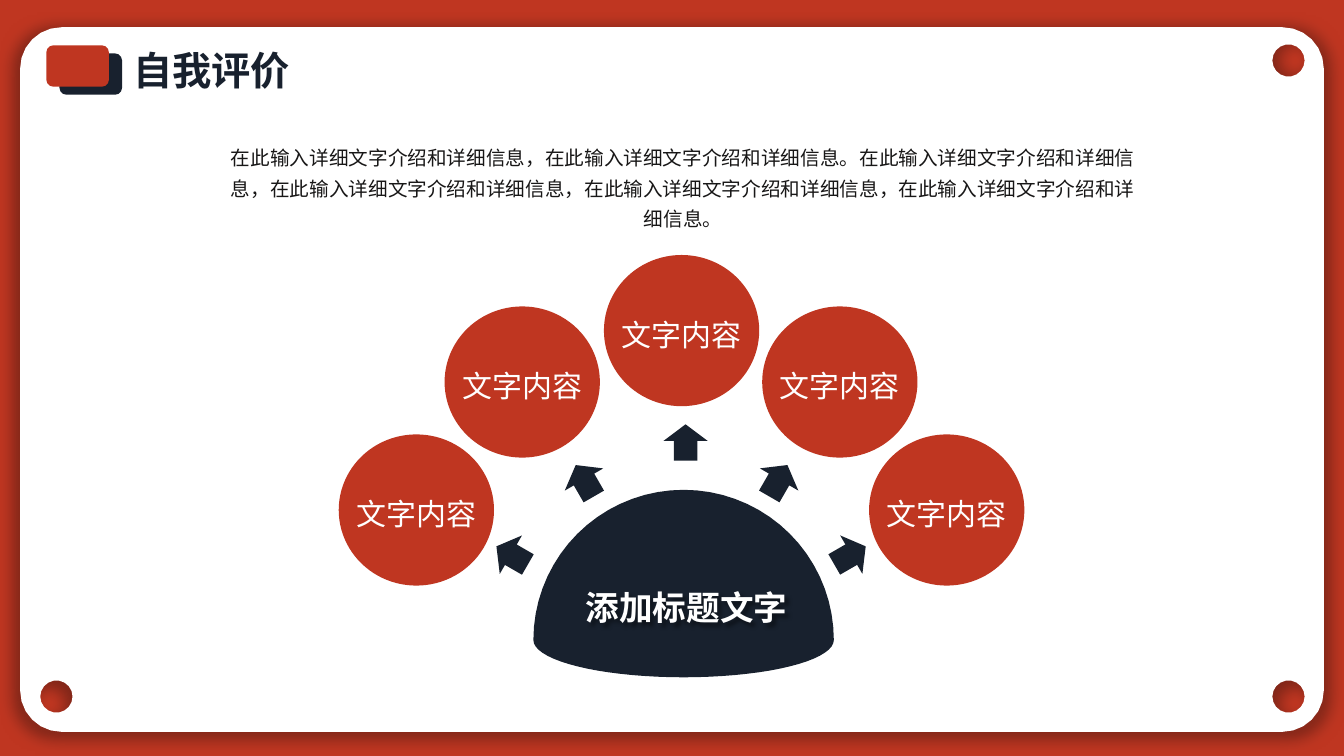
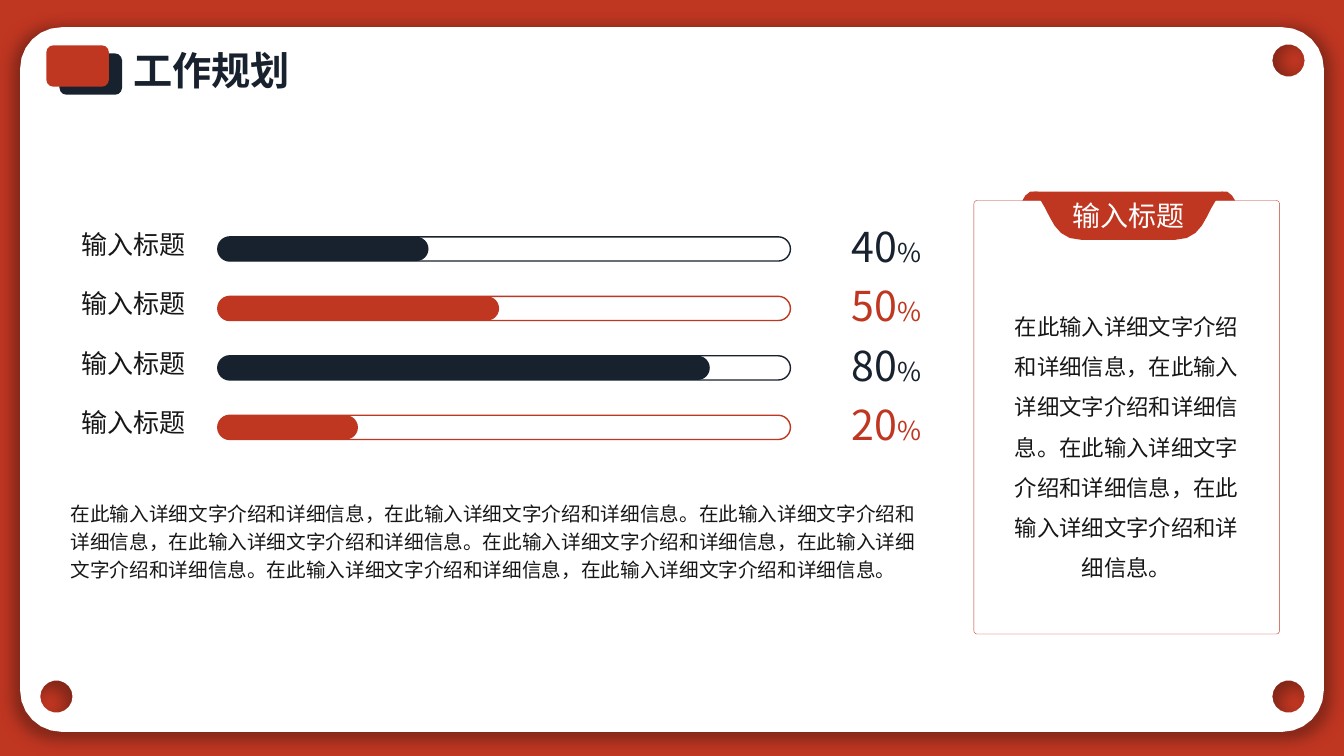
from math import cos, radians, sin

from lxml import etree
from pptx import Presentation
from pptx.dml.color import RGBColor
from pptx.enum.shapes import MSO_SHAPE as Preset
from pptx.enum.text import MSO_ANCHOR as Anchor, MSO_AUTO_SIZE as AutoSize, PP_ALIGN as Align
from pptx.oxml import parse_xml
from pptx.oxml.ns import nsdecls, qn
from pptx.util import Inches, Pt

RED = RGBColor(0xBF, 0x36, 0x21)
NAVY = RGBColor(0x18, 0x21, 0x2E)
INK = RGBColor(0x18, 0x17, 0x17)
WHITE = RGBColor(0xFF, 0xFF, 0xFF)
FONT = "Noto Sans CJK SC"
SENTENCE = "在此输入详细文字介绍和详细信息，在此输入详细文字介绍和详细信息。"
SHADOW = (
    "<a:effectLst {ns}><a:outerShdw blurRad='{blur}' dist='38100' dir='{angle}' sx='{scale}' sy='{scale}' "
    "algn='ctr' rotWithShape='0'>"
    "<a:srgbClr val='{colour}'><a:alpha val='{alpha}'/></a:srgbClr></a:outerShdw></a:effectLst>"
)


def paint(shape, fill=None, line=None, width=1):
    shape.shadow.inherit = False
    if fill is None:
        shape.fill.background()
    else:
        shape.fill.solid()
        shape.fill.fore_color.rgb = fill
    if line is None:
        shape.line.fill.background()
    else:
        shape.line.color.rgb = line
        shape.line.width = Pt(width)
    return shape


def write(box, parts, colour, align=Align.CENTER, spacing=None, anchor=Anchor.MIDDLE,
          margins=(0.1, 0.05, 0.1, 0.05), bold=False, wrap=True):
    """Set one paragraph made of (text, size) parts; margins run left, top, right, bottom."""
    frame = box.text_frame
    frame.auto_size = AutoSize.NONE
    frame.word_wrap = wrap
    frame.vertical_anchor = anchor
    frame.margin_left, frame.margin_top, frame.margin_right, frame.margin_bottom = map(Inches, margins)
    para = frame.paragraphs[0]
    para.alignment = align
    if spacing:
        para.line_spacing = spacing
    for text, size in parts:
        span = para.add_run()
        span.text = text
        span.font.size = Pt(size)
        span.font.bold = bold
        span.font.color.rgb = colour
        span.font.name = FONT
        east_asian = etree.Element(qn("a:ea"), typeface=FONT)
        span.font._element.find(qn("a:latin")).addnext(east_asian)


deck = Presentation()
deck.slide_width, deck.slide_height = Inches(13.33), Inches(7.5)

# Shared layout: red background, white card with punched holes, title and its badge
layout = deck.slide_layouts[5]
layout.background.fill.solid()
layout.background.fill.fore_color.rgb = RED
title_holder, *other_holders = layout.placeholders
for holder in other_holders:
    holder.element.getparent().remove(holder.element)
title_holder.left, title_holder.top = Inches(1.22), Inches(0.41)
title_holder.width, title_holder.height = Inches(1.83), Inches(0.57)

pages = []
for title in ("自我评价", "工作规划"):
    page = deck.slides.add_slide(layout)
    write(page.shapes.title, [(title, 28)], NAVY, Align.LEFT, anchor=Anchor.TOP, bold=True)
    pages.append(page)
review, plan = pages

corners = ((12.72, 6.85, 0), (0.61, 6.85, 90), (0.61, 0.68, 180), (12.72, 0.68, 270))
contours = [[
    (Inches(x + 0.41 * cos(radians(angle))), Inches(y + 0.41 * sin(radians(angle))))
    for x, y, start in corners for angle in range(start, start + 91, 15)
]]
for x, y in ((12.78, 0.6), (0.56, 6.91), (12.78, 6.91)):
    contours.append([
        (Inches(x + 0.16 * cos(radians(angle))), Inches(y + 0.16 * sin(radians(angle))))
        for angle in range(360, 0, -20)
    ])
builder = review.shapes.build_freeform(*contours[0][0])
builder.add_line_segments(contours[0][1:])
for hole in contours[1:]:
    builder.move_to(*hole[0])
    builder.add_line_segments(hole[1:])
card = paint(builder.convert_to_shape(), WHITE)
properties = card.element.spPr
properties.remove(properties.find(qn("a:effectLst")))
properties.append(parse_xml(SHADOW.format(
    ns=nsdecls("a"), blur=139700, angle=5400000, scale=101000, colour="7B2518", alpha=95000)))

shared = [card]
for left, top, colour in ((0.59, 0.53, NAVY), (0.46, 0.45, RED)):
    badge = review.shapes.add_shape(
        Preset.ROUNDED_RECTANGLE, Inches(left), Inches(top), Inches(0.62), Inches(0.41))
    shared.append(paint(badge, colour))
for position, shape in enumerate(shared, start=2):
    layout.shapes.element.insert(position, shape.element)

# Self review: a dome with five circles fanned around it
intro = review.shapes.add_textbox(Inches(2.17), Inches(1.33), Inches(9.21), Inches(1.02))
intro_text = SENTENCE + SENTENCE[:-1] + "，" + SENTENCE
write(intro, [(intro_text, 14)], INK, spacing=1.3, anchor=Anchor.TOP)

dome_points = []
for angle in range(0, 360, 5):
    height = 0.37 if angle < 180 else 1.49
    dome_points.append((Inches(6.78 + 1.49 * cos(radians(angle))),
                        Inches(6.35 + height * sin(radians(angle)))))
builder = review.shapes.build_freeform(*dome_points[0])
builder.add_line_segments(dome_points[1:])
paint(builder.convert_to_shape(), NAVY)
dome_label = review.shapes.add_textbox(Inches(5.59), Inches(5.69), Inches(2.44), Inches(0.54))
write(dome_label, [("添加标题文字", 24)], WHITE, spacing=1.2, anchor=Anchor.TOP, bold=True)
dome_label.element.spPr.append(parse_xml(SHADOW.format(
    ns=nsdecls("a"), blur=38100, angle=2700000, scale=100000, colour="000000", alpha=43000)))

fan = (  # circle left and top, arrow left, top and rotation
    (3.36, 4.31, 4.86, 5.33, 300),
    (4.41, 3.04, 5.58, 4.59, 330),
    (5.99, 2.53, 6.58, 4.21, 0),
    (7.56, 3.04, 7.5, 4.59, 30),
    (8.62, 4.31, 8.21, 5.33, 60),
)
for left, top, arrow_left, arrow_top, rotation in fan:
    arrow = review.shapes.add_shape(
        Preset.UP_ARROW, Inches(arrow_left), Inches(arrow_top), Inches(0.44), Inches(0.36))
    paint(arrow, NAVY)
    arrow.adjustments[0], arrow.adjustments[1] = 0.53, 0.46
    arrow.rotation = rotation
    circle = review.shapes.add_shape(Preset.OVAL, Inches(left), Inches(top), Inches(1.54), Inches(1.5))
    paint(circle, RED)
    write(circle, [("文字内容", 21.4)], WHITE, spacing=1.2, wrap=False)

# Work plan: progress bars on the left, framed note on the right
progress = (("40", 2.09, NAVY), ("50", 2.79, RED), ("80", 4.88, NAVY), ("20", 1.39, RED))
padding = (0.12, 0.06, 0.12, 0.06)
for row, (percent, filled, colour) in enumerate(progress):
    drop = 0.59 * row
    label = plan.shapes.add_textbox(Inches(0.63), Inches(2.22 + drop), Inches(1.33), Inches(0.4))
    write(label, [("输入标题", 18.6)], INK, Align.RIGHT, margins=padding)
    for width, fill, line in ((5.68, None, colour), (filled, colour, None)):
        bar = plan.shapes.add_shape(
            Preset.ROUNDED_RECTANGLE, Inches(2.16), Inches(2.35 + drop), Inches(width), Inches(0.24))
        bar.adjustments[0] = 0.5
        paint(bar, fill, line)
    figure = plan.shapes.add_textbox(Inches(8.45), Inches(2.25 + drop), Inches(1.05), Inches(0.38))
    write(figure, [(percent, 29.4), ("%", 18.6)], colour, Align.LEFT, margins=(0, 0, 0, 0))

summary = plan.shapes.add_textbox(Inches(0.58), Inches(4.87), Inches(8.74), Inches(1.39))
write(summary, [(SENTENCE * 4, 14)], INK, Align.LEFT, 1.2, Anchor.TOP, padding)

note = plan.shapes.add_shape(
    Preset.ROUNDED_RECTANGLE, Inches(9.66), Inches(1.99), Inches(3.03), Inches(4.3))
note.adjustments[0] = 0.01
paint(note, line=RED, width=0.25)
write(note, [(SENTENCE * 2, 16)], INK, spacing=1.5, margins=(0.37, 0.93, 0.37, 0.47))

# The tab: two ears behind it, and a plaque with curved sides
for left, width in ((10.14, 0.23), (12.04, 0.21)):
    right = left + width
    ear_points = [(Inches(x), Inches(y)) for x, y in (
        (left, 1.99), (left + 0.03, 1.94), (left + 0.08, 1.9),
        (right - 0.08, 1.9), (right - 0.03, 1.94), (right, 1.99))]
    builder = plan.shapes.build_freeform(*ear_points[0])
    builder.add_line_segments(ear_points[1:])
    paint(builder.convert_to_shape(), RED)

# Right side as a Bézier curve: distance from the plaque's centre, and height
curve = ((0.88, 1.97), (0.76, 2.14), (0.74, 2.38), (0.46, 2.38))
edge = [(0.94, 1.9)]
for step in range(7):
    t = step / 6
    weights = ((1 - t) ** 3, 3 * t * (1 - t) ** 2, 3 * t ** 2 * (1 - t), t ** 3)
    edge.append(tuple(sum(weight * point[axis] for weight, point in zip(weights, curve))
                      for axis in (0, 1)))
plaque_points = [(Inches(11.19 + x), Inches(y)) for x, y in edge]
plaque_points += [(Inches(11.19 - x), Inches(y)) for x, y in reversed(edge)]
builder = plan.shapes.build_freeform(*plaque_points[0])
builder.add_line_segments(plaque_points[1:])
plaque = paint(builder.convert_to_shape(), RED)
write(plaque, [("输入标题", 20)], WHITE, margins=padding)

deck.save("out.pptx")
